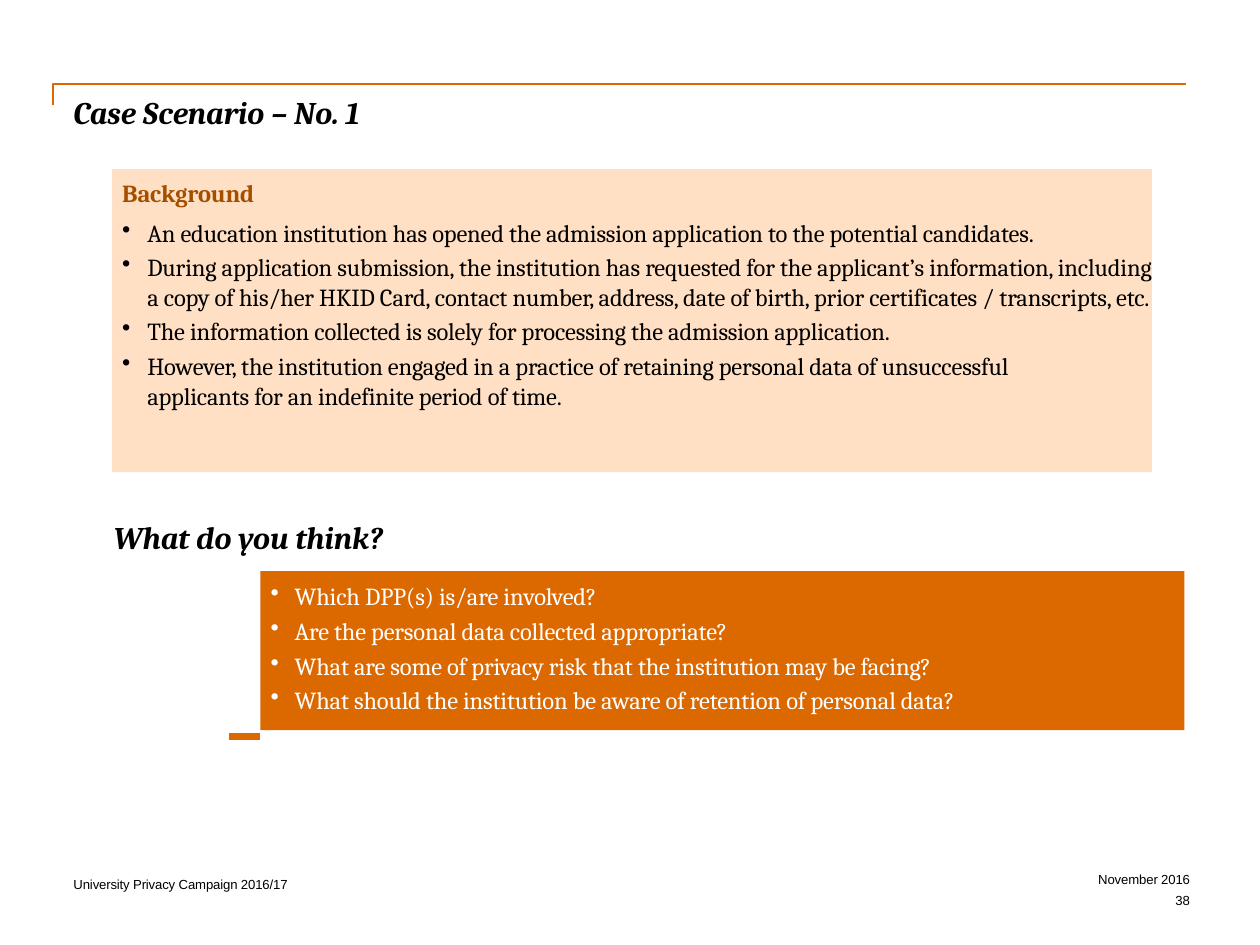
from lxml.etree import SubElement
from pptx import Presentation
from pptx.dml.color import RGBColor
from pptx.enum.shapes import MSO_CONNECTOR, MSO_SHAPE
from pptx.enum.text import MSO_ANCHOR, PP_ALIGN
from pptx.oxml.ns import qn
from pptx.util import Pt

BLACK = RGBColor(0x00, 0x00, 0x00)
WHITE = RGBColor(0xFF, 0xFF, 0xFF)
ORANGE = RGBColor(0xDC, 0x69, 0x00)
PEACH = RGBColor(0xFF, 0xE0, 0xC5)
BROWN = RGBColor(0xA4, 0x4F, 0x00)

TITLE = "Case Scenario – No. 1"
BACKGROUND_HEADING = "Background"
BACKGROUND = [
    "An education institution has opened the admission application to the potential candidates.",
    "During application submission, the institution has requested for the applicant’s information, "
    "including a copy of his/her HKID Card, contact number, address, date of birth, "
    "prior certificates / transcripts, etc.",
    "The information collected is solely for processing the admission application.",
    "However, the institution engaged in a practice of retaining personal data of unsuccessful\v"
    "applicants for an indefinite period of time.",
]
QUESTION_HEADING = "What do you think?"
QUESTIONS = [
    "Which DPP(s) is/are involved?",
    "Are the personal data collected appropriate?",
    "What are some of privacy risk that the institution may be facing?",
    "What should the institution be aware of retention of personal data?",
]
CAMPAIGN = "University Privacy Campaign 2016/17"
DATE = "November 2016"
PAGE = "38"


def set_frame(sp, top_inset=0):
    tf = sp.text_frame
    tf.word_wrap = True
    tf.vertical_anchor = MSO_ANCHOR.TOP
    tf.margin_left = tf.margin_right = tf.margin_bottom = 0
    tf.margin_top = Pt(top_inset)
    return tf


def add_box(s, x, y, w, h, top_inset=0):
    return set_frame(s.shapes.add_textbox(Pt(x), Pt(y), Pt(w), Pt(h)), top_inset)


def add_panel(s, x, y, w, h, color, top_inset):
    sp = s.shapes.add_shape(MSO_SHAPE.RECTANGLE, Pt(x), Pt(y), Pt(w), Pt(h))
    sp.shadow.inherit = False
    sp.fill.solid()
    sp.fill.fore_color.rgb = color
    sp.line.fill.background()
    return set_frame(sp, top_inset)


def add_text(tf, text, size, color=BLACK, font="Cambria", bold=False, italic=False,
             before=0, align=PP_ALIGN.LEFT, left=0, hanging=0, spacing=-10):
    p = tf.paragraphs[0] if not tf.text else tf.add_paragraph()
    p.text = text
    p.alignment = align
    p.space_before = Pt(before)
    p.font.name = font
    p.font.size = Pt(size)
    p.font.color.rgb = color
    p.font.bold = bold
    p.font.italic = italic
    for r in p.runs:
        r.font._element.set("spc", str(spacing))
    pPr = p._p.get_or_add_pPr()
    pPr.set("marL", str(Pt(left)))
    pPr.set("indent", str(-Pt(hanging)))
    if hanging:
        bullet = pPr.makeelement(qn("a:buChar"), {"char": "•"})
        pPr.insert_element_before(bullet, "a:tabLst", "a:defRPr", "a:extLst")
    return p


def add_bullets(tf, items, color, first_before, left, hanging):
    for i, item in enumerate(items):
        add_text(tf, item, 14, color, before=3 if i else first_before,
                 left=left, hanging=hanging)


def add_corner_rule(s, x, y, right, drop):
    fb = s.shapes.build_freeform(Pt(x), Pt(y + drop))
    fb.add_line_segments([(Pt(x), Pt(y)), (Pt(right), Pt(y))], close=False)
    sp = fb.convert_to_shape()
    sp.shadow.inherit = False
    sp.fill.background()
    sp.line.color.rgb = ORANGE
    sp.line.width = Pt(0.96)


def add_dash(s, x1, x2, y):
    line = s.shapes.add_connector(MSO_CONNECTOR.STRAIGHT, Pt(x1), Pt(y), Pt(x2), Pt(y))
    line.line.color.rgb = ORANGE
    line.line.width = Pt(4.08)
    SubElement(line._element.spPr, qn("a:effectLst"))


def main():
    prs = Presentation()
    prs.slide_width, prs.slide_height = Pt(720), Pt(540)
    s = prs.slides.add_slide(prs.slide_layouts[6])

    add_corner_rule(s, 30.2, 48.2, 678, 12)
    tf = add_box(s, 40.5, 36, 638.5, 61, 17.4)
    add_text(tf, TITLE, 18, bold=True, italic=True, left=1.4, spacing=-5)

    tf = add_panel(s, 64, 96.6, 594.3, 173.2, PEACH, 5)
    add_text(tf, BACKGROUND_HEADING, 14, BROWN, bold=True, before=5.3, left=5.8)
    add_bullets(tf, BACKGROUND, BLACK, 6, 20.2, 14.4)

    tf = add_box(s, 64, 296, 186.5, 22.3)
    add_text(tf, QUESTION_HEADING, 18, bold=True, italic=True, left=1, spacing=-5)

    add_dash(s, 131, 148.8, 421)
    tf = add_panel(s, 148.8, 326.3, 528, 90.9, ORANGE, 5.8)
    add_bullets(tf, QUESTIONS, WHITE, 5.5, 19.6, 13.7)

    tf = add_box(s, 41, 501, 126, 9.4)
    add_text(tf, CAMPAIGN, 7.5, font="Arial", left=1).line_spacing = Pt(8.6)
    tf = add_box(s, 624, 498.2, 56, 21.6)
    add_text(tf, DATE, 7.5, font="Arial", align=PP_ALIGN.RIGHT).line_spacing = Pt(8.6)
    add_text(tf, PAGE, 7.5, font="Arial", align=PP_ALIGN.RIGHT, before=3)

    prs.save("out.pptx")


if __name__ == "__main__":
    main()
